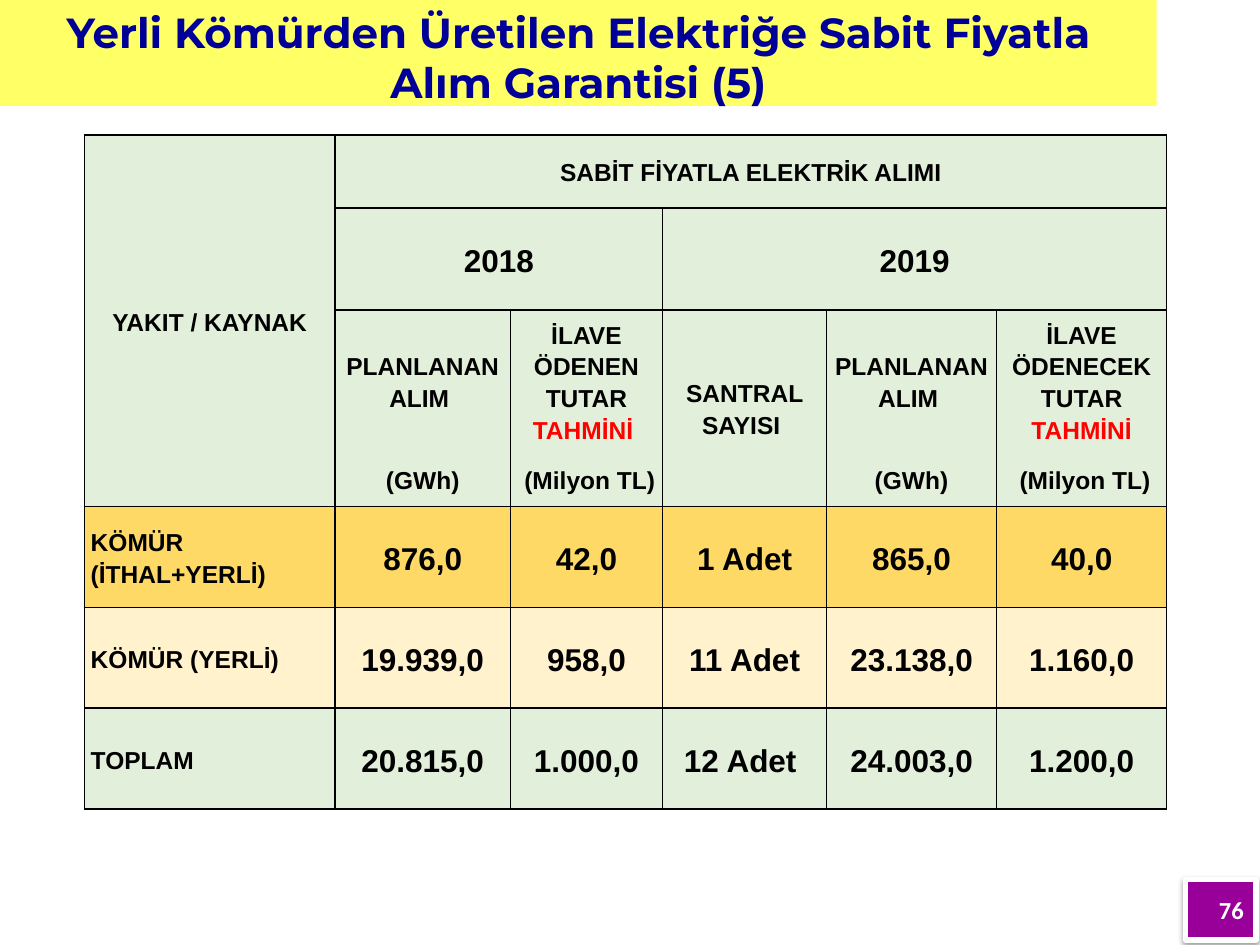
from lxml.etree import SubElement
from pptx import Presentation
from pptx.dml.color import RGBColor
from pptx.enum.shapes import MSO_SHAPE
from pptx.enum.text import MSO_ANCHOR, MSO_AUTO_SIZE, PP_ALIGN
from pptx.oxml import parse_xml
from pptx.oxml.ns import nsdecls, qn
from pptx.util import Inches, Pt

COLORS = {
    "banner": "FFFF66", "title": "000099", "badge": "990099", "white": "FFFFFF",
    "black": "000000", "estimate": "FF0000", "green": "E2EFDA",
    "gold": "FFD966", "cream": "FFF2CC",
}
COLUMN_WIDTHS = [1.99, 1.39, 1.21, 1.3, 1.35, 1.35]
ROW_HEIGHTS = [0.58, 0.81, 1.13, 0.43, 0.8, 0.8, 0.8]
MERGES = [(0, 0, 3, 0), (0, 1, 0, 5), (1, 1, 1, 2), (1, 3, 1, 5), (2, 3, 3, 3)]
OPEN_EDGES = {(2, "lnB"), (3, "lnT")}
HEADERS = {
    (0, 0): "YAKIT / KAYNAK",
    (0, 1): "SABİT FİYATLA ELEKTRİK ALIMI",
    (1, 1): "2018",
    (1, 3): "2019",
    (2, 1): "PLANLANAN ALIM ",
    (2, 2): "İLAVE ÖDENEN\nTUTAR\nTAHMİNİ ",
    (2, 3): "SANTRAL SAYISI ",
    (2, 4): "PLANLANAN ALIM ",
    (2, 5): "İLAVE ÖDENECEK\nTUTAR\nTAHMİNİ",
    (3, 1): "(GWh)",
    (3, 2): " (Milyon TL)",
    (3, 4): "(GWh)",
    (3, 5): " (Milyon TL)",
}
FUEL_ROWS = [
    ("gold", ["KÖMÜR (İTHAL+YERLİ)", "876,0", "42,0", "1 Adet", "865,0", "40,0"]),
    ("cream", ["KÖMÜR (YERLİ)", "19.939,0", "958,0", "11 Adet", "23.138,0", "1.160,0"]),
    ("green", ["TOPLAM", "20.815,0", "1.000,0", "12 Adet ", "24.003,0", "1.200,0"]),
]


class SlideBuilder:
    def __init__(self, slide):
        self.slide = slide

    def color(self, name):
        return RGBColor.from_string(COLORS[name])

    def fill(self, target, name):
        target.fill.solid()
        target.fill.fore_color.rgb = self.color(name)

    def style(self, paragraph, font_name, size, color, alignment):
        paragraph.alignment = alignment
        font = paragraph.font
        font.name, font.size, font.bold = font_name, Pt(size), True
        font.color.rgb = self.color(color)

    def title(self, text, left, top, width, height):
        shape = self.slide.shapes.title
        shape.left, shape.top = Inches(left), Inches(top)
        shape.width, shape.height = Inches(width), Inches(height)
        self.fill(shape, "banner")
        frame = shape.text_frame
        frame.text = text
        frame.word_wrap = True
        frame.auto_size = MSO_AUTO_SIZE.NONE
        frame.vertical_anchor = MSO_ANCHOR.TOP
        self.style(frame.paragraphs[0], "Montserrat", 24, "title", PP_ALIGN.CENTER)

    def page_badge(self, text, left, top, width, height):
        shape = self.slide.shapes.add_shape(
            MSO_SHAPE.RECTANGLE, Inches(left), Inches(top), Inches(width), Inches(height))
        self.fill(shape, "badge")
        shape.line.color.rgb = self.color("white")
        shape.line.width = Pt(3)
        shape.shadow.inherit = False
        effects = shape.element.spPr.find(qn("a:effectLst"))
        shadow = SubElement(effects, qn("a:outerShdw"), blurRad=str(Pt(3.1)),
                            dist=str(Pt(1.6)), dir="5400000", rotWithShape="0")
        shadow_color = SubElement(shadow, qn("a:srgbClr"), val=COLORS["black"])
        SubElement(shadow_color, qn("a:alpha"), val="38000")
        frame = shape.text_frame
        frame.text = text
        frame.vertical_anchor = MSO_ANCHOR.MIDDLE
        self.style(frame.paragraphs[0], "Calibri", 14, "white", PP_ALIGN.RIGHT)

    def table(self, left, top):
        table = self.slide.shapes.add_table(
            len(ROW_HEIGHTS), len(COLUMN_WIDTHS), Inches(left), Inches(top),
            Inches(sum(COLUMN_WIDTHS)), Inches(sum(ROW_HEIGHTS))).table
        table.first_row = table.horz_banding = False
        for column, width in zip(table.columns, COLUMN_WIDTHS):
            column.width = Inches(width)
        for row, height in zip(table.rows, ROW_HEIGHTS):
            row.height = Inches(height)
        for top_row, left_column, bottom_row, right_column in MERGES:
            table.cell(top_row, left_column).merge(table.cell(bottom_row, right_column))
        return table

    def cell(self, table, row, column, text, fill, size, alignment=PP_ALIGN.CENTER):
        cell = table.cell(row, column)
        self.fill(cell, fill)
        self.borders(cell, row)
        cell.margin_left = cell.margin_right = Inches(0.05)
        cell.margin_top = cell.margin_bottom = 0
        cell.vertical_anchor = MSO_ANCHOR.MIDDLE
        cell.text = text
        for paragraph in cell.text_frame.paragraphs:
            paragraph.line_spacing = 1.15
            color = "estimate" if paragraph.text.startswith("TAHMİNİ") else "black"
            self.style(paragraph, "Arial", size, color, alignment)

    def borders(self, cell, row):
        properties = cell._tc.get_or_add_tcPr()
        for index, edge in enumerate(("lnL", "lnR", "lnT", "lnB")):
            paint = f'<a:solidFill><a:srgbClr val="{COLORS["black"]}"/></a:solidFill>'
            if (row, edge) in OPEN_EDGES:
                paint = "<a:noFill/>"
            properties.insert(index, parse_xml(
                f'<a:{edge} {nsdecls("a")} w="{Pt(1)}">{paint}</a:{edge}>'))


def main():
    presentation = Presentation()
    presentation.slide_width, presentation.slide_height = Inches(10), Inches(7.5)
    slide = presentation.slides.add_slide(presentation.slide_layouts[5])
    builder = SlideBuilder(slide)
    builder.title("Yerli Kömürden Üretilen Elektriğe Sabit Fiyatla Alım Garantisi (5)",
                  0, 0, 9.18, 0.84)
    builder.page_badge("76", 9.41, 6.98, 0.56, 0.48)

    table = builder.table(0.67, 1.07)
    header_count = len(ROW_HEIGHTS) - len(FUEL_ROWS)
    for row in range(header_count):
        for column in range(len(COLUMN_WIDTHS)):
            builder.cell(table, row, column, HEADERS.get((row, column), ""), "green",
                         18 if row == 1 else 14)
    for row, (fill, (fuel, *values)) in enumerate(FUEL_ROWS, header_count):
        builder.cell(table, row, 0, fuel, fill, 14, PP_ALIGN.LEFT)
        for column, value in enumerate(values, 1):
            builder.cell(table, row, column, value, fill, 18)
    presentation.save("out.pptx")


if __name__ == "__main__":
    main()
